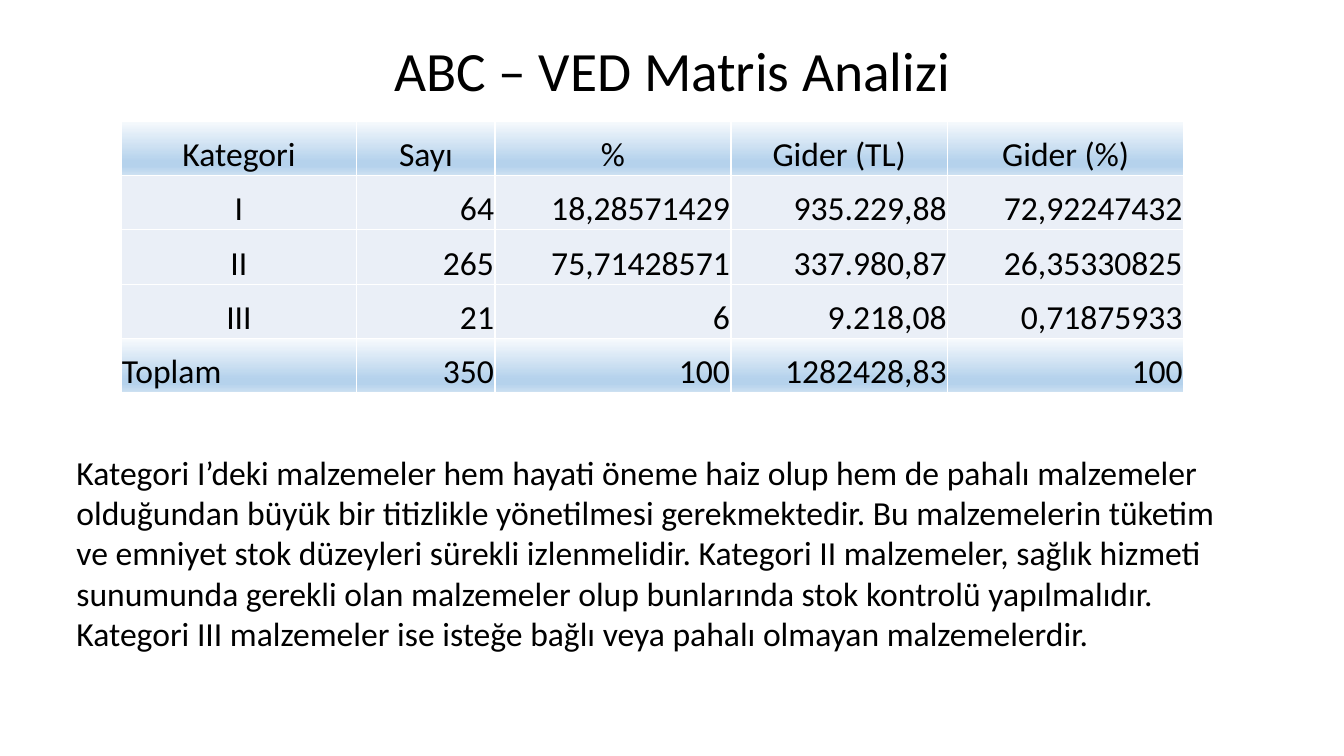
import pptx
import pptx.util
import pptx.dml.color
import pptx.enum.text
import pptx.oxml
import pptx.oxml.ns
from lxml import etree

Inches, Pt = pptx.util.Inches, pptx.util.Pt
RGBColor = pptx.dml.color.RGBColor
ALIGN = pptx.enum.text.PP_ALIGN
ANCHOR = pptx.enum.text.MSO_ANCHOR

TITLE = "ABC – VED Matris Analizi"
ROWS = [
    ("Kategori", "Sayı", "%", "Gider (TL)", "Gider (%)"),
    ("I", "64", "18,28571429", "935.229,88", "72,92247432"),
    ("II", "265", "75,71428571", "337.980,87", "26,35330825"),
    ("III", "21", "6", "9.218,08", "0,71875933"),
    ("Toplam", "350", "100", "1282428,83", "100"),
]
BODY = (
    "Kategori I’deki malzemeler hem hayati öneme haiz olup hem de pahalı malzemeler "
    "olduğundan büyük bir titizlikle yönetilmesi gerekmektedir. Bu malzemelerin tüketim "
    "ve emniyet stok düzeyleri sürekli izlenmelidir. Kategori II malzemeler, sağlık hizmeti "
    "sunumunda gerekli olan malzemeler olup bunlarında stok kontrolü yapılmalıdır. "
    "Kategori III malzemeler ise isteğe bağlı veya pahalı olmayan malzemelerdir."
)

COL_WIDTHS = (2.34, 1.37, 2.34, 2.15, 2.34)
ROW_HEIGHT = 0.54
BLACK = RGBColor(0, 0, 0)
WHITE = RGBColor(0xFF, 0xFF, 0xFF)
PALE = RGBColor(0xEA, 0xEF, 0xF7)
MID_BLUE = RGBColor(0xB5, 0xD2, 0xEC)
BAND_STOPS = (
    (0, RGBColor(0xF7, 0xFA, 0xFD)),
    (74, MID_BLUE),
    (83, MID_BLUE),
    (100, RGBColor(0xCE, 0xE1, 0xF2)),
)


def write(tf, text, size=24, align=ALIGN.LEFT, anchor=None, spacing=None):
    tf.word_wrap = True
    if anchor is not None:
        tf.vertical_anchor = anchor
    p = tf.paragraphs[0]
    p.alignment, p.line_spacing = align, spacing
    r = p.add_run()
    r.text = text
    r.font.size, r.font.name = Pt(size), "Calibri"
    r.font.color.rgb = BLACK


def add_xml(parent, xml):
    ns = pptx.oxml.ns.nsdecls("a")
    parent.append(pptx.oxml.parse_xml(xml.replace(">", f" {ns}>", 1)))


def style_cell(cell, banded):
    cell.margin_left = cell.margin_right = cell.margin_top = Inches(0.01)
    cell.margin_bottom = 0
    cell.vertical_anchor = ANCHOR.BOTTOM
    tcPr = cell._tc.get_or_add_tcPr()
    for side in "LRTB":
        add_xml(tcPr, f'<a:ln{side} w="{Pt(1)}"><a:solidFill><a:srgbClr val="{WHITE}"/>'
                      f'</a:solidFill></a:ln{side}>')
    if banded:
        stops = "".join(f'<a:gs pos="{pos * 1000}"><a:srgbClr val="{color}"/></a:gs>'
                        for pos, color in BAND_STOPS)
        add_xml(tcPr, f'<a:gradFill rotWithShape="1"><a:gsLst>{stops}</a:gsLst>'
                      '<a:lin ang="5400000" scaled="0"/></a:gradFill>')
    else:
        cell.fill.solid()
        cell.fill.fore_color.rgb = PALE


def cell_align(row, col):
    if row == 0:
        return ALIGN.CENTER
    if col > 0:
        return ALIGN.RIGHT
    return ALIGN.LEFT if row == len(ROWS) - 1 else ALIGN.CENTER


def main():
    prs = pptx.Presentation()
    prs.slide_width, prs.slide_height = Inches(13.33), Inches(7.5)
    shapes = prs.slides.add_slide(prs.slide_layouts[6]).shapes

    title = shapes.add_textbox(Inches(0.92), Inches(0.4), Inches(11.5), Inches(0.65))
    write(title.text_frame, TITLE, size=39.6, align=ALIGN.CENTER,
          anchor=ANCHOR.MIDDLE, spacing=0.9)

    table = shapes.add_table(len(ROWS), len(COL_WIDTHS), Inches(1.2), Inches(1.2),
                             Inches(sum(COL_WIDTHS)), Inches(ROW_HEIGHT * len(ROWS))).table
    for column, width in zip(table.columns, COL_WIDTHS):
        column.width = Inches(width)
    for i, values in enumerate(ROWS):
        table.rows[i].height = Inches(ROW_HEIGHT)
        for j, value in enumerate(values):
            cell = table.cell(i, j)
            style_cell(cell, banded=i in (0, len(ROWS) - 1))
            write(cell.text_frame, value, align=cell_align(i, j))

    body = shapes.add_textbox(Inches(0.66), Inches(4.43), Inches(11.76), Inches(2.12))
    write(body.text_frame, BODY)
    body.text_frame.auto_size = pptx.enum.text.MSO_AUTO_SIZE.SHAPE_TO_FIT_TEXT

    prs.save("out.pptx")


if __name__ == "__main__":
    main()
